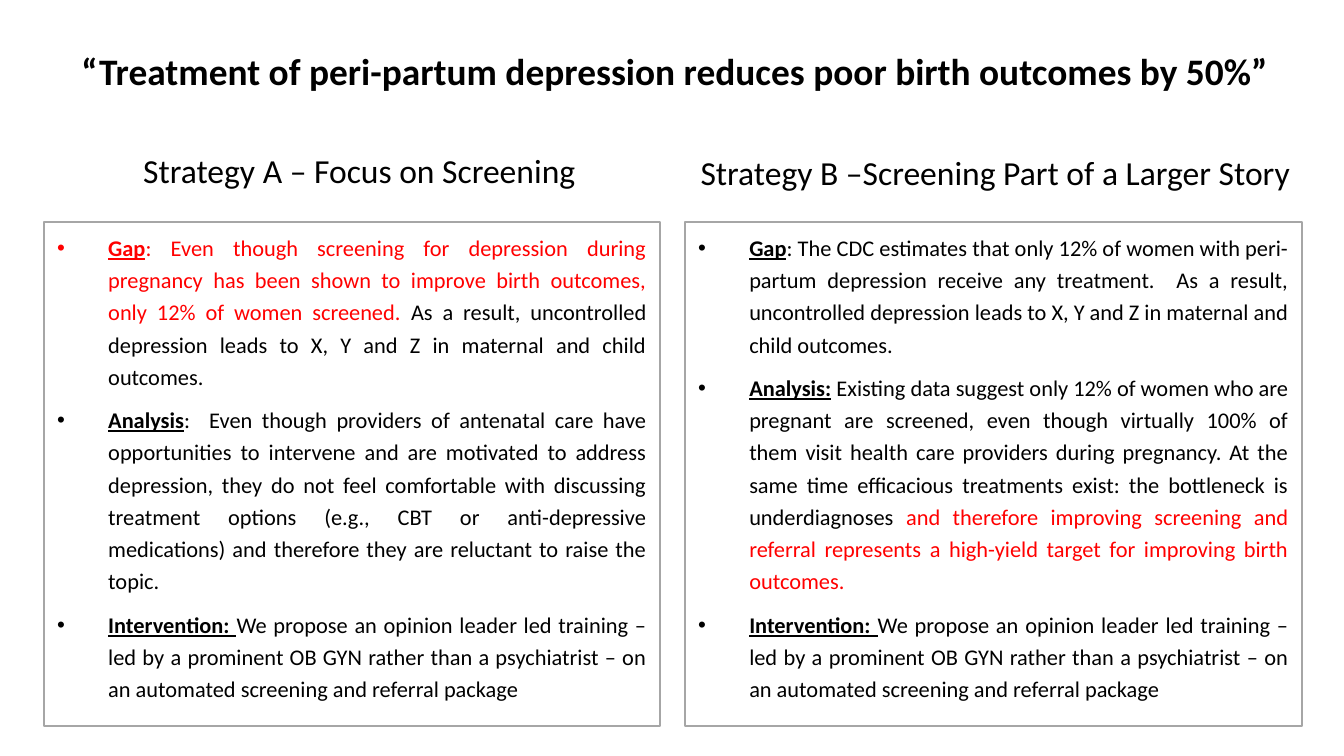
from lxml.etree import SubElement
from pptx import Presentation
from pptx.dml.color import RGBColor
from pptx.enum.shapes import MSO_SHAPE
from pptx.enum.text import MSO_ANCHOR, PP_ALIGN
from pptx.oxml.ns import qn
from pptx.util import Emu, Pt

PX_PER_INCH = 134.4
FONT = "Calibri"
BLACK, RED, GREY, WHITE = "000000", "FF0000", "A6A6A6", "FFFFFF"
PANEL_TOP, PANEL_HEIGHT = 222, 504
INDENT = 51

INTERVENTION = [
    ("Intervention: ", BLACK, True),
    ("We propose an opinion leader led training – led by a prominent OB GYN "
     "rather than a psychiatrist – on an automated screening and referral "
     "package", BLACK, False),
]

# Each point is a list of (text, colour, is_label) runs.
STRATEGY_A = [
    [
        ("Gap", RED, True),
        (": Even though screening for depression during pregnancy has been "
         "shown to improve birth outcomes, only 12% of women screened. ",
         RED, False),
        ("As a result, uncontrolled depression leads to X, Y and Z in "
         "maternal and child outcomes. ", BLACK, False),
    ],
    [
        ("Analysis", BLACK, True),
        (":  Even though providers of antenatal care have opportunities to "
         "intervene and are motivated to address depression, they do not feel "
         "comfortable with discussing treatment options (e.g., CBT or "
         "anti-depressive medications) and therefore they are reluctant to "
         "raise the topic.", BLACK, False),
    ],
    INTERVENTION,
]

STRATEGY_B = [
    [
        ("Gap", BLACK, True),
        (": The CDC estimates that only 12% of women with peri-partum "
         "depression receive any treatment.  As a result, uncontrolled "
         "depression leads to X, Y and Z in maternal and child outcomes. ",
         BLACK, False),
    ],
    [
        ("Analysis:", BLACK, True),
        (" Existing data suggest only 12% of women who are pregnant are "
         "screened, even though virtually 100% of them visit health care "
         "providers during pregnancy. At the same time efficacious treatments "
         "exist: the bottleneck is underdiagnoses ", BLACK, False),
        ("and therefore improving screening and referral represents a "
         "high-yield target for improving birth outcomes. ", RED, False),
    ],
    INTERVENTION,
]


def px(n):
    return Emu(round(n * 914400 / PX_PER_INCH))


def rgb(value):
    return RGBColor.from_string(value)


def set_attrs(obj, values):
    for name, value in values.items():
        setattr(obj, name, value)


def add_run(p, text, size, color=BLACK, bold=False, underline=False):
    r = p.add_run()
    r.text = text
    set_attrs(r.font, {"name": FONT, "size": Pt(size), "bold": bold,
                       "underline": underline})
    r.font.color.rgb = rgb(color)


def add_bullet(p):
    """Give the paragraph a hanging round bullet."""
    pPr = p._p.get_or_add_pPr()
    pPr.set("marL", str(px(INDENT)))
    pPr.set("indent", str(-px(INDENT)))
    SubElement(pPr, qn("a:buFont"), typeface="Arial")
    SubElement(pPr, qn("a:buChar"), char="•")


def add_heading(s, box, text, size, bold=False):
    tf = s.shapes.add_textbox(*map(px, box)).text_frame
    tf.word_wrap = True
    p = tf.paragraphs[0]
    p.alignment = PP_ALIGN.CENTER
    add_run(p, text, size, bold=bold)


def add_panel(s, left, width, points):
    """Draw a framed box holding one bulleted paragraph per point."""
    sp = s.shapes.add_shape(MSO_SHAPE.RECTANGLE, px(left), px(PANEL_TOP),
                            px(width), px(PANEL_HEIGHT))
    sp.shadow.inherit = False
    sp.fill.background()
    sp.line.color.rgb = rgb(GREY)
    sp.line.width = Pt(0.75)
    tf = sp.text_frame
    set_attrs(tf, {"word_wrap": True, "vertical_anchor": MSO_ANCHOR.TOP})
    for i, point in enumerate(points):
        p = tf.add_paragraph() if i else tf.paragraphs[0]
        set_attrs(p, {"alignment": PP_ALIGN.JUSTIFY, "line_spacing": 1.2,
                      "space_before": Pt(6)})
        add_bullet(p)
        for text, color, is_label in point:
            add_run(p, text, 12, color, bold=is_label, underline=is_label)


def main():
    prs = Presentation()
    prs.slide_width, prs.slide_height = px(1344), px(756)
    s = prs.slides.add_slide(prs.slide_layouts[6])
    s.background.fill.solid()
    s.background.fill.fore_color.rgb = rgb(WHITE)

    add_heading(s, (44, 42, 1262, 59), "“Treatment of peri-partum depression "
                "reduces poor birth outcomes by 50%”", 20, bold=True)
    add_heading(s, (127, 143, 465, 54), "Strategy A – Focus on Screening", 18)
    add_heading(s, (685, 145, 621, 54),
                "Strategy B –Screening Part of a Larger Story", 18)
    add_panel(s, 44, 616, STRATEGY_A)
    add_panel(s, 685, 617, STRATEGY_B)
    prs.save("out.pptx")


if __name__ == "__main__":
    main()
